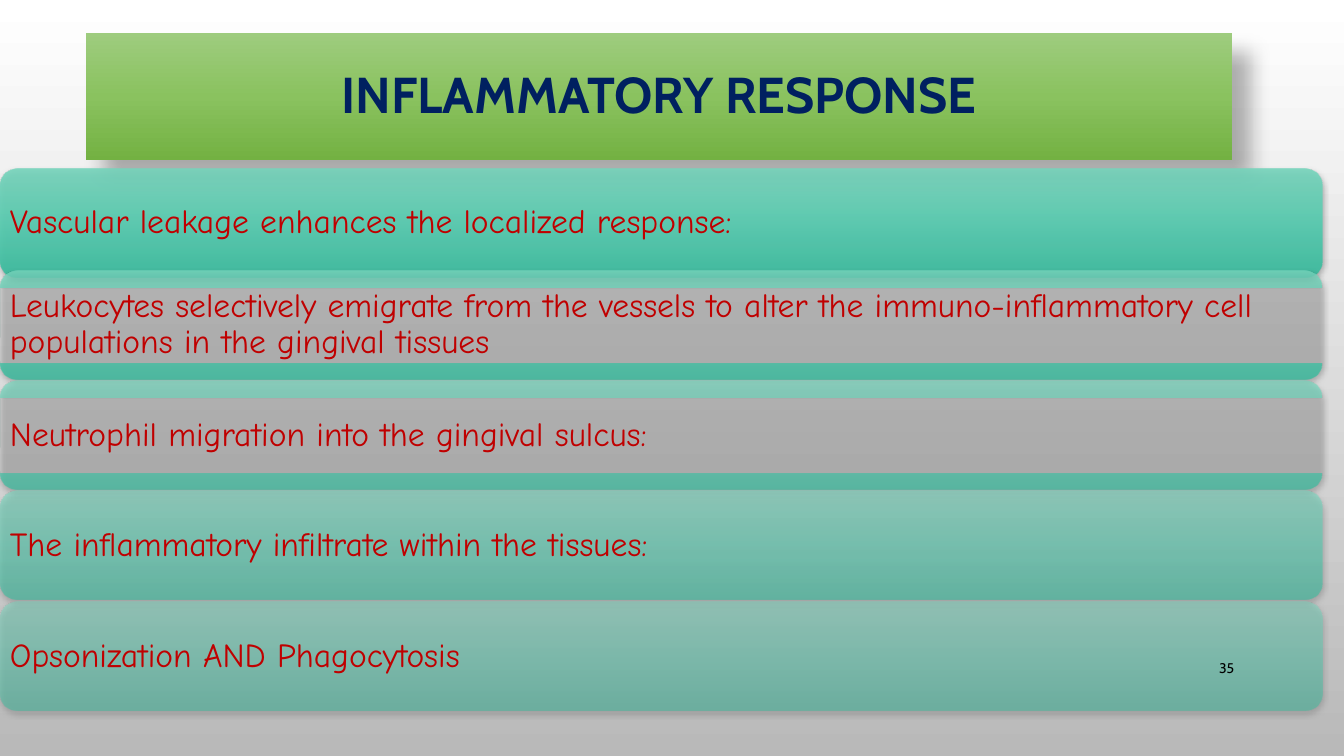
from lxml import etree
from pptx import Presentation
from pptx.dml.color import RGBColor
from pptx.enum.shapes import MSO_SHAPE
from pptx.enum.text import MSO_ANCHOR, PP_ALIGN
from pptx.oxml.ns import qn
from pptx.util import Inches, Pt

RECTANGLE, ROUNDED = MSO_SHAPE.RECTANGLE, MSO_SHAPE.ROUNDED_RECTANGLE
MIDDLE = MSO_ANCHOR.MIDDLE
LEFT, CENTER, RIGHT = PP_ALIGN.LEFT, PP_ALIGN.CENTER, PP_ALIGN.RIGHT

NAVY = RGBColor(0x00, 0x20, 0x60)
RED = RGBColor(0xC0, 0x00, 0x00)
BLACK = RGBColor(0x00, 0x00, 0x00)
WHITE = RGBColor(0xFF, 0xFF, 0xFF)
GREY = RGBColor(0xB9, 0xB9, 0xB9)
GREENS = [RGBColor(0x9E, 0xCC, 0x7E), RGBColor(0x8A, 0xC2, 0x5F), RGBColor(0x73, 0xB1, 0x42)]
TEALS = [RGBColor(0x77, 0xD4, 0xBC), RGBColor(0x54, 0xCB, 0xAF), RGBColor(0x36, 0xBA, 0x9C)]

TITLE_FONT = {"name": "Cabin", "size": Pt(36), "bold": True}
STEP_FONT = {"name": "Comic Neue", "size": Pt(24)}
NUMBER_FONT = {"name": "Cabin", "size": Pt(10)}

TITLE_SHADOW = {"opacity": 30, "blur": 15, "distance": 18, "angle": 45}
STEP_SHADOW = {"opacity": 28, "blur": 4, "distance": 2, "angle": 90}

# Top of each step and its wording
STEPS = [
    (1.67, "Vascular leakage enhances the localized response:"),
    (2.68, "Leukocytes selectively emigrate from the vessels to alter the "
           "immuno-inflammatory cell populations in the gingival tissues"),
    (3.78, "Neutrophil migration into the gingival sulcus:"),
    (4.87, "The inflammatory infiltrate within the tissues:"),
    (5.97, "Opsonization AND Phagocytosis"),
]
STEP_WIDTH, STEP_HEIGHT = 13.12, 1.08


def add_color(parent, color, opacity):
    """Append an RGB colour, with transparency where it is needed."""
    node = etree.SubElement(parent, qn("a:srgbClr"), val=str(color))
    if opacity < 100:
        etree.SubElement(node, qn("a:alpha"), val=str(opacity * 1000))


def set_gradient(owner, fill, colors, opacity=100):
    """Give the owner a top-to-bottom gradient with evenly spaced stops."""
    fill.gradient()
    fill.gradient_angle = 270
    stops = next(owner.iter(qn("a:gsLst")))
    for stop in list(stops):
        stops.remove(stop)
    for index, color in enumerate(colors):
        position = 100000 * index // (len(colors) - 1)
        stop = etree.SubElement(stops, qn("a:gs"), pos=str(position))
        add_color(stop, color, opacity)


def set_shadow(shape, opacity, blur, distance, angle):
    shape.shadow.inherit = False
    effects = next(shape.element.iter(qn("a:effectLst")))
    outer = etree.SubElement(
        effects, qn("a:outerShdw"), blurRad=str(Pt(blur)), dist=str(Pt(distance)),
        dir=str(angle * 60000), algn="tl", rotWithShape="0")
    add_color(outer, BLACK, opacity)


def add_panel(page, kind, bounds, colors, opacity, shadow):
    panel = page.shapes.add_shape(kind, *map(Inches, bounds))
    set_gradient(panel.element, panel.fill, colors, opacity)
    panel.line.fill.background()
    set_shadow(panel, **shadow)
    return panel


def write_text(shape, text, font, color, align, spacing=0.9):
    frame = shape.text_frame
    frame.word_wrap = True
    frame.vertical_anchor = MIDDLE
    para = frame.paragraphs[0]
    para.alignment = align
    para.line_spacing = spacing
    span = para.add_run()
    span.text = text
    for name, value in font.items():
        setattr(span.font, name, value)
    span.font.color.rgb = color


def add_label(page, bounds, *text_format):
    box = page.shapes.add_textbox(*map(Inches, bounds))
    for side in ("left", "top", "right", "bottom"):
        setattr(box.text_frame, f"margin_{side}", Inches(0.1))
    write_text(box, *text_format)


def main():
    deck = Presentation()
    deck.slide_width, deck.slide_height = Inches(13.33), Inches(7.5)
    page = deck.slides.add_slide(deck.slide_layouts[6])
    set_gradient(page.element, page.background.fill, [WHITE, GREY])

    # Title banner
    banner = add_panel(page, RECTANGLE, (0.85, 0.33, 11.37, 1.26), GREENS, 100, TITLE_SHADOW)
    write_text(banner, "INFLAMMATORY RESPONSE", TITLE_FONT, NAVY, CENTER)

    # Steps, each fainter than the one above
    for index, (top, text) in enumerate(STEPS):
        bounds = (0, top, STEP_WIDTH, STEP_HEIGHT)
        add_panel(page, ROUNDED, bounds, TEALS, 90 - 10 * index, STEP_SHADOW)
        add_label(page, bounds, text, STEP_FONT, RED, LEFT)

    # Page number
    add_label(page, (11.5, 6.43, 0.84, 0.4), "35", NUMBER_FONT, BLACK, RIGHT, 1.0)

    deck.save("out.pptx")


if __name__ == "__main__":
    main()
